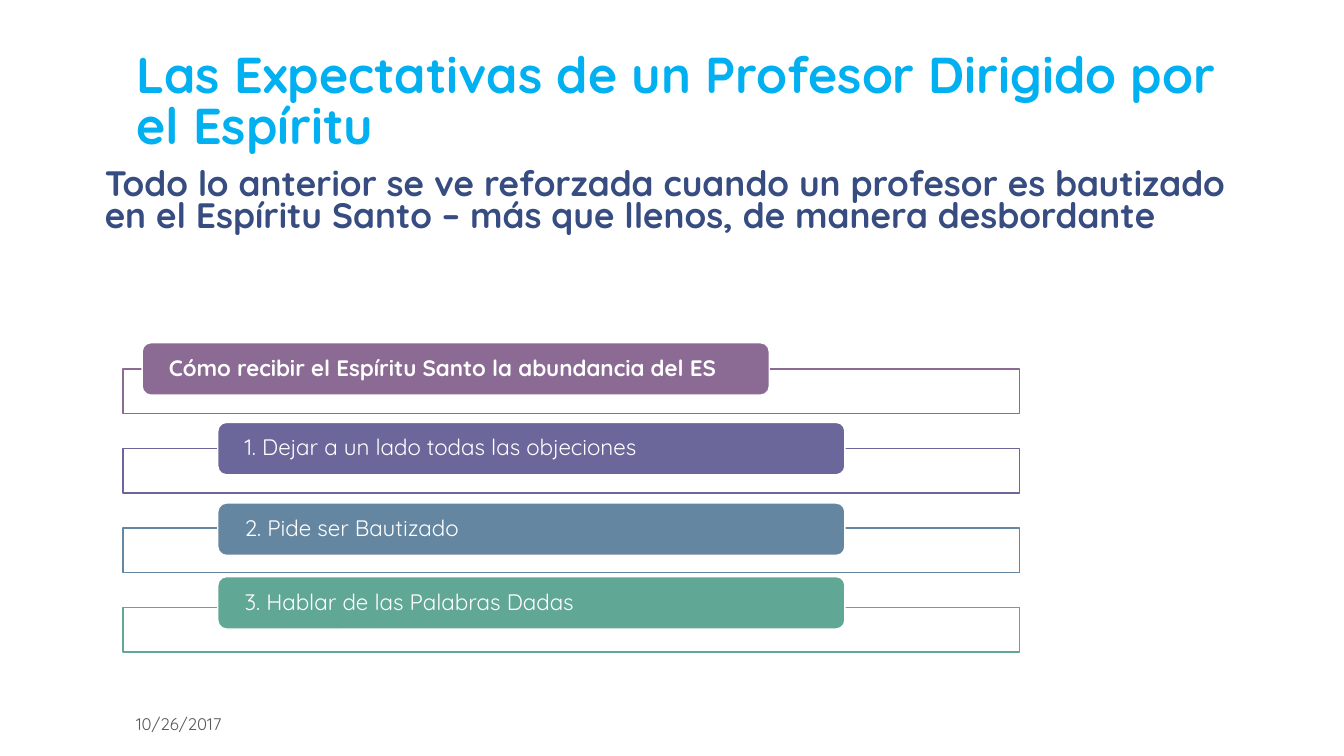
from dataclasses import dataclass

from pptx import Presentation
from pptx.dml.color import RGBColor
from pptx.enum.shapes import MSO_SHAPE as SHAPE
from pptx.enum.text import MSO_ANCHOR as ANCHOR, PP_ALIGN as ALIGN
from pptx.util import Inches, Pt


@dataclass(frozen=True)
class Theme:
    font: str = "Quicksand"
    white: str = "FFFFFF"
    title: str = "00B0F0"
    body: str = "374C81"
    date: str = "595959"
    bars: tuple = ("8B6A94", "6C679B", "6486A1", "61A796")
    title_size: float = 36
    body_size: float = 25.2
    bar_size: float = 16
    date_size: float = 12


class SlideBuilder:
    def __init__(self, slide, theme):
        self.slide = slide
        self.theme = theme

    def set_text(self, sp, text, size, color, bold=False, spacing=1.0,
                 anchor=ANCHOR.TOP, insets=(0.13, 0.07)):
        """Fill a shape with one left-aligned paragraph; insets are (side, top and bottom)."""
        tf = sp.text_frame
        tf.text = text
        tf.word_wrap = True
        tf.vertical_anchor = anchor
        tf.margin_left = tf.margin_right = Inches(insets[0])
        tf.margin_top = tf.margin_bottom = Inches(insets[1])
        p = tf.paragraphs[0]
        p.alignment = ALIGN.LEFT
        p.line_spacing = spacing
        font = p.runs[0].font
        font.name = self.theme.font
        font.size = Pt(size)
        font.bold = bold
        font.color.rgb = RGBColor.from_string(color)

    def text(self, box, text, size, color, **style):
        sp = self.slide.shapes.add_textbox(*map(Inches, box))
        self.set_text(sp, text, size, color, **style)

    def shape(self, kind, box, fill, line):
        sp = self.slide.shapes.add_shape(kind, *map(Inches, box))
        sp.shadow.inherit = False
        sp.fill.solid()
        sp.fill.fore_color.rgb = RGBColor.from_string(fill)
        sp.line.color.rgb = RGBColor.from_string(line)
        sp.line.width = Pt(1)
        return sp

    def step(self, frame_top, bar_left, bar_top, text, color, bold):
        """Draw an outlined frame with a filled, labelled bar over its top edge."""
        t = self.theme
        self.shape(SHAPE.RECTANGLE, (1.22, frame_top, 8.89, 0.44), t.white, color)
        bar = self.shape(SHAPE.ROUNDED_RECTANGLE, (bar_left, bar_top, 6.22, 0.52),
                         color, t.white)
        self.set_text(bar, text, t.bar_size, t.white, bold=bold, spacing=0.9,
                      anchor=ANCHOR.MIDDLE, insets=(0.24, 0))


def main():
    prs = Presentation()
    prs.slide_width, prs.slide_height = Inches(13.33), Inches(7.5)
    t = Theme()
    s = SlideBuilder(prs.slides.add_slide(prs.slide_layouts[6]), t)

    s.text((1.22, 0.08, 11.11, 1.53),
           "Las Expectativas de un Profesor Dirigido por el Espíritu",
           t.title_size, t.title, bold=True, spacing=0.85, anchor=ANCHOR.BOTTOM)
    s.text((0.91, 1.63, 11.46, 0.78),
           "Todo lo anterior se ve reforzada cuando un profesor es bautizado "
           "en el Espíritu Santo – más que llenos, de manera desbordante",
           t.body_size, t.body, bold=True, spacing=0.75)

    steps = (
        (1.41, 3.4, "Cómo recibir el Espíritu Santo la abundancia del ES"),
        (2.16, 4.19, "1. Dejar a un lado todas las objeciones"),
        (2.16, 4.99, "2. Pide ser Bautizado"),
        (2.16, 5.72, "3. Hablar de las Palabras Dadas"),
    )
    for i, ((left, top, text), color) in enumerate(zip(steps, t.bars)):
        s.step(3.66 + 0.79 * i, left, top, text, color, bold=i == 0)

    s.text((1.22, 7, 3, 0.35), "10/26/2017", t.date_size, t.date,
           anchor=ANCHOR.BOTTOM)
    prs.save("out.pptx")


if __name__ == "__main__":
    main()
